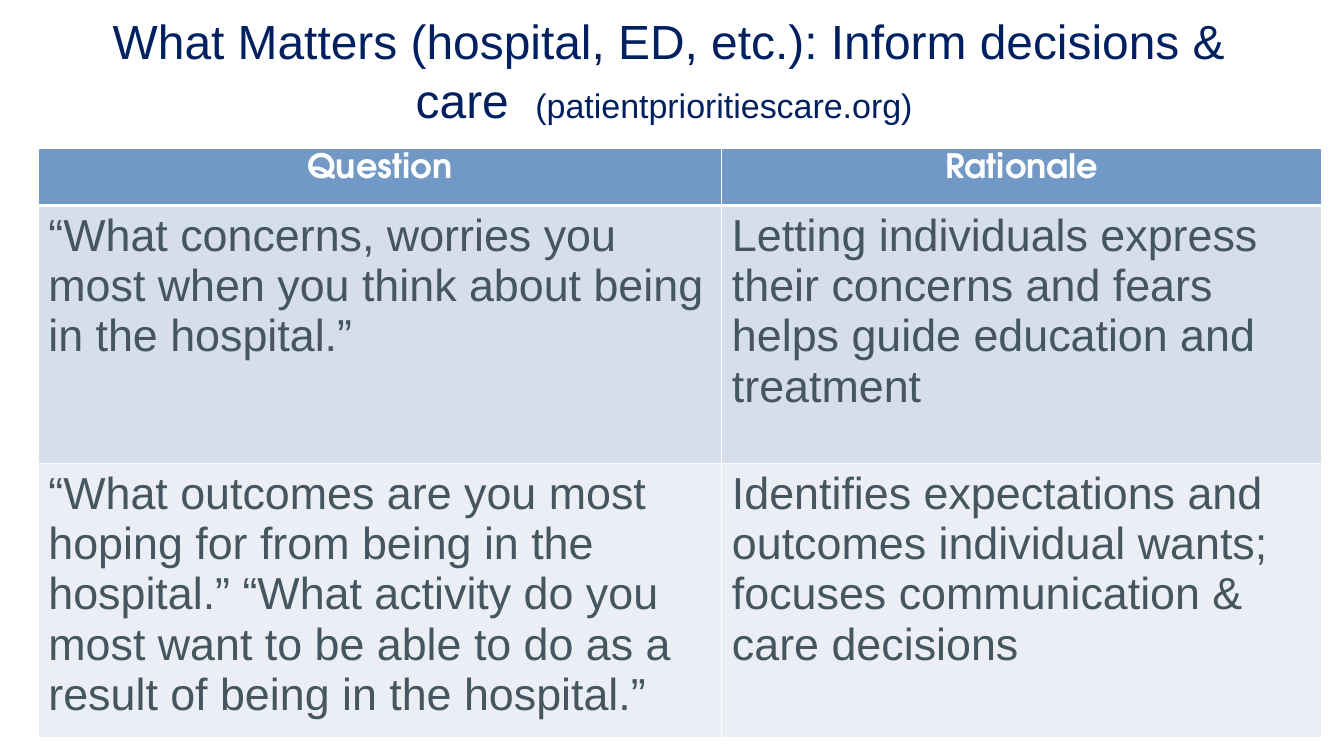
from lxml import etree
from pptx import Presentation
from pptx.dml.color import RGBColor
from pptx.enum.text import MSO_ANCHOR, MSO_AUTO_SIZE, PP_ALIGN
from pptx.oxml.ns import qn
from pptx.util import Inches, Pt

CENTER, LEFT = PP_ALIGN.CENTER, PP_ALIGN.LEFT
TOP, MIDDLE = MSO_ANCHOR.TOP, MSO_ANCHOR.MIDDLE
NO_AUTOFIT = MSO_AUTO_SIZE.NONE

NAVY = RGBColor(0x00, 0x20, 0x60)
WHITE = RGBColor(0xFF, 0xFF, 0xFF)
SLATE = RGBColor(0x45, 0x56, 0x60)
HEADER_BLUE = RGBColor(0x72, 0x99, 0xC6)
BANDS = [RGBColor(0xD5, 0xDE, 0xEA), RGBColor(0xEB, 0xEF, 0xF5)]

TITLE = [
    ("What Matters (hospital, ED, etc.): Inform decisions & care  ", 34.2),
    ("(patientprioritiescare.org) ", 24.3),
]
ROWS = [
    ("Question", "Rationale"),
    ("“What concerns, worries you most when you think about being in the hospital.”",
     "Letting individuals express their concerns and fears helps guide education and treatment"),
    ("“What outcomes are you most hoping for from being in the hospital.” "
     "“What activity do you most want to be able to do as a result of being in the hospital.”",
     "Identifies expectations and outcomes individual wants; "
     "focuses communication & care decisions"),
]
COL_WIDTHS = [6.78, 5.95]
ROW_HEIGHTS = [0.57, 2.56, 2.72]


def add_text(p, text, size, color, font="Arial", bold=False, align=LEFT, spacing=1.0):
    """Add a formatted run to a paragraph."""
    p.alignment = align
    p.line_spacing = spacing
    r = p.add_run()
    r.text = text
    r.font.size = Pt(size)
    r.font.name = font
    r.font.bold = bold
    r.font.color.rgb = color


def set_borders(cell, bottom):
    """Draw white borders around a cell, with the given bottom width."""
    tc_pr = cell._tc.get_or_add_tcPr()
    widths = {"a:lnL": 1, "a:lnR": 1, "a:lnT": 1, "a:lnB": bottom}
    for i, (tag, width) in enumerate(widths.items()):
        ln = etree.Element(qn(tag), w=str(Pt(width)))
        fill = etree.SubElement(ln, qn("a:solidFill"))
        etree.SubElement(fill, qn("a:srgbClr"), val=str(WHITE))
        tc_pr.insert(i, ln)


def add_title(s):
    """Fill and place the title placeholder."""
    sp = s.shapes.title
    sp.left, sp.top = Inches(0.63), Inches(0.17)
    sp.width, sp.height = Inches(12.01), Inches(1.03)
    tf = sp.text_frame
    tf.word_wrap = True
    tf.auto_size = NO_AUTOFIT
    tf.vertical_anchor = MIDDLE
    tf.margin_left = tf.margin_right = tf.margin_top = tf.margin_bottom = 0
    for text, size in TITLE:
        add_text(tf.paragraphs[0], text, size, NAVY, align=CENTER, spacing=1.02)


def add_questions(s):
    """Build the table of questions and rationales."""
    table = s.shapes.add_table(
        len(ROWS), len(COL_WIDTHS), Inches(0.38), Inches(1.47),
        Inches(sum(COL_WIDTHS)), Inches(sum(ROW_HEIGHTS))).table
    for col, width in zip(table.columns, COL_WIDTHS):
        col.width = Inches(width)
    for i, (row, height) in enumerate(zip(table.rows, ROW_HEIGHTS)):
        row.height = Inches(height)
        header = i == 0
        for cell, text in zip(row.cells, ROWS[i]):
            cell.vertical_anchor = TOP
            cell.margin_left = cell.margin_right = Inches(0.1)
            cell.margin_top = cell.margin_bottom = Inches(0.05)
            cell.fill.solid()
            cell.fill.fore_color.rgb = HEADER_BLUE if header else BANDS[i - 1]
            set_borders(cell, bottom=3 if header else 1)
            p = cell.text_frame.paragraphs[0]
            if header:
                add_text(p, text, 24, WHITE, font="TeX Gyre Adventor", bold=True, align=CENTER)
            else:
                add_text(p, text, 32, SLATE)


def main():
    """Build the slide and save it."""
    prs = Presentation()
    prs.slide_width, prs.slide_height = Inches(13.33), Inches(7.5)
    s = prs.slides.add_slide(prs.slide_layouts[5])
    add_title(s)
    add_questions(s)
    prs.save("out.pptx")


if __name__ == "__main__":
    main()
